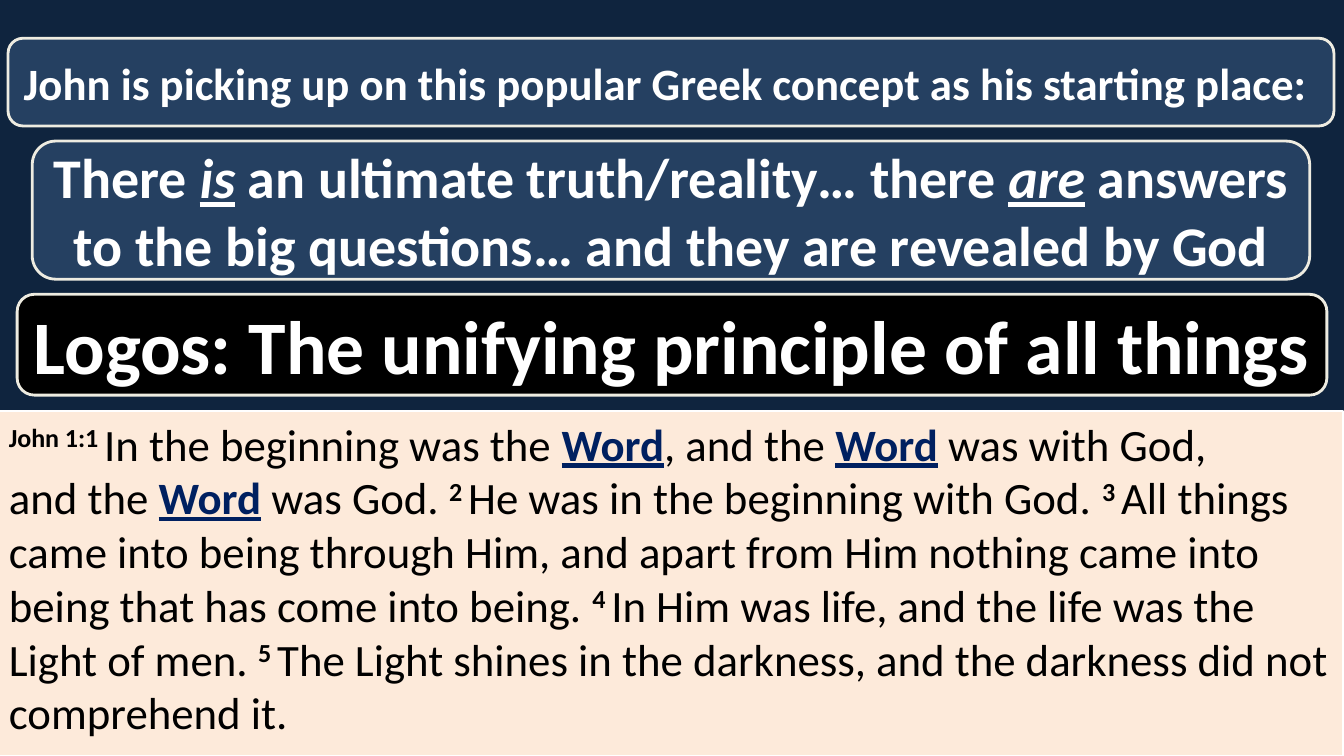
"""Build a slide on the Logos concept above the text of John 1:1-5."""
from dataclasses import dataclass

from pptx import Presentation
from pptx.dml.color import RGBColor
from pptx.enum.shapes import MSO_SHAPE
from pptx.enum.text import MSO_ANCHOR, PP_ALIGN
from pptx.util import Inches, Pt

RECTANGLE = MSO_SHAPE.RECTANGLE
CALLOUT = MSO_SHAPE.ROUNDED_RECTANGULAR_CALLOUT
TOP, MIDDLE = MSO_ANCHOR.TOP, MSO_ANCHOR.MIDDLE
LEFT, CENTER = PP_ALIGN.LEFT, PP_ALIGN.CENTER


@dataclass(frozen=True)
class Theme:
    """Colours, font and sizes of the slide."""
    font: str = "Calibri"
    background: str = "0F243E"
    panel: str = "254061"
    black: str = "000000"
    white: str = "FFFFFF"
    cream: str = "EEECE1"
    paper: str = "FDEADA"
    word: str = "002060"
    body: int = 32
    claim: int = 40
    logos: int = 54
    verse_line: float = 1.5
    callout_line: float = 2


THEME = Theme()
PLAIN, NUMBER, WORD, STRESS = "plain", "number", "word", "stress"
CALLOUT_ADJUSTMENTS = (-0.22, 0.5, 0.17)
HARD_SPACE = chr(160)

VERSES = [
    (f"John 1:1{HARD_SPACE}", NUMBER),
    (f"In the beginning was{HARD_SPACE}the ", PLAIN),
    ("Word", WORD),
    (", and the ", PLAIN),
    ("Word", WORD),
    (f" was{HARD_SPACE}with God, and{HARD_SPACE}the ", PLAIN),
    ("Word", WORD),
    (f" was God.{HARD_SPACE}", PLAIN),
    ("2 ", NUMBER),
    (f"He was in the beginning with God.{HARD_SPACE}", PLAIN),
    (f"3{HARD_SPACE}", NUMBER),
    ("All things came into being through Him, and apart from Him nothing "
     f"came into being that has come into being.{HARD_SPACE}", PLAIN),
    (f"4{HARD_SPACE}", NUMBER),
    (f"In Him was life, and the life was{HARD_SPACE}the Light of "
     f"men.{HARD_SPACE}", PLAIN),
    (f"5{HARD_SPACE}", NUMBER),
    ("The Light shines in the darkness, and the darkness did not "
     "comprehend it.", PLAIN),
]
CLAIM = [
    ("There ", PLAIN),
    ("is", STRESS),
    (" an ultimate truth/reality… there ", PLAIN),
    ("are", STRESS),
    (" answers to the big questions… and they are revealed by God", PLAIN),
]
LOGOS = [("Logos: The unifying principle of all things", PLAIN)]
INTRO = [("John is picking up on this popular Greek concept as his "
          "starting place: ", PLAIN)]

CALLOUTS = [
    (LOGOS, (0.17, 2.92, 12.99, 1), THEME.black, THEME.logos),
    (INTRO, (0.08, 0.38, 13.15, 0.87), THEME.panel, THEME.body),
    (CLAIM, (0.32, 1.4, 12.67, 1.37), THEME.panel, THEME.claim),
]
VERSE_AREA = (-0.01, 4.08, 13.33, 3.42)


def color(value):
    return RGBColor.from_string(value)


def add_box(page, kind, area, fill, line, width):
    box = page.shapes.add_shape(kind, *map(Inches, area))
    box.shadow.inherit = False
    box.fill.solid()
    box.fill.fore_color.rgb = color(fill)
    box.line.color.rgb = color(line)
    box.line.width = Pt(width)
    return box


def write(box, spans, size, ink, bold, anchor, align):
    frame = box.text_frame
    frame.word_wrap = True
    frame.vertical_anchor = anchor
    para = frame.paragraphs[0]
    para.alignment = align
    para.font.name = THEME.font
    para.font.size = Pt(size)
    para.font.bold = bold
    para.font.color.rgb = color(ink)
    for text, style in spans:
        span = para.add_run()
        span.text = text
        if style == NUMBER:
            span.font.bold = True
            span.font._element.set("baseline", "30000")
        elif style == WORD:
            span.font.bold = True
            span.font.underline = True
            span.font.color.rgb = color(THEME.word)
        elif style == STRESS:
            span.font.italic = True
            span.font.underline = True


def main():
    deck = Presentation()
    deck.slide_width, deck.slide_height = Inches(13.33), Inches(7.5)
    page = deck.slides.add_slide(deck.slide_layouts[6])
    page.background.fill.solid()
    page.background.fill.fore_color.rgb = color(THEME.background)

    passage = add_box(page, RECTANGLE, VERSE_AREA, THEME.paper,
                      THEME.white, THEME.verse_line)
    write(passage, VERSES, THEME.body, THEME.black, False, TOP, LEFT)

    for spans, area, fill, size in CALLOUTS:
        callout = add_box(page, CALLOUT, area, fill,
                          THEME.cream, THEME.callout_line)
        for index, value in enumerate(CALLOUT_ADJUSTMENTS):
            callout.adjustments[index] = value
        write(callout, spans, size, THEME.white, True, MIDDLE, CENTER)

    deck.save("out.pptx")


if __name__ == "__main__":
    main()
